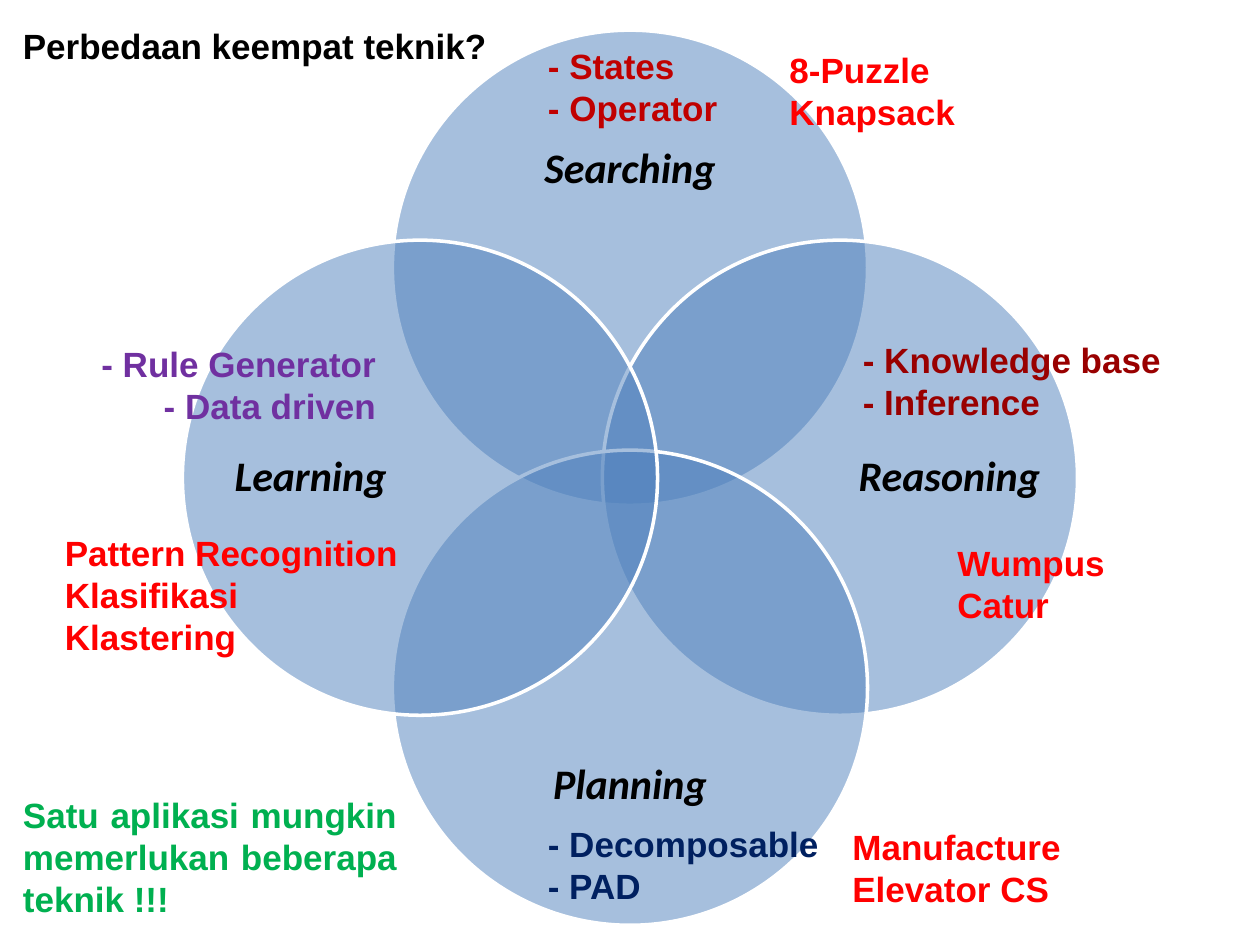
from dataclasses import dataclass

import lxml.etree
import pptx
import pptx.dml.color
import pptx.enum.shapes
import pptx.enum.text
import pptx.oxml.ns
import pptx.util

Pt = pptx.util.Pt
ALIGN = pptx.enum.text.PP_ALIGN


@dataclass(frozen=True)
class Theme:
    circle: str = "4F81BD"
    outline: str = "FFFFFF"
    text: str = "000000"
    example: str = "FF0000"
    searching: str = "C00000"
    reasoning: str = "990000"
    planning: str = "002060"
    learning: str = "7030A0"
    remark: str = "00B050"
    label_font: str = "Calibri"
    note_font: str = "Arial"
    label_size: int = 24
    note_size: int = 20


THEME = Theme()
CENTRE_X, CENTRE_Y = 360, 273
DIAMETER = 271.5
CIRCLE_OFFSET = 120

# name, horizontal and vertical direction, label distance, label width and height
TECHNIQUES = [
    ("Searching", 0, -1, 176, 208.8, 86.4),
    ("Reasoning", 1, 0, 182.5, 104.4, 208.8),
    ("Planning", 0, 1, 176, 208.8, 86.4),
    ("Learning", -1, 0, 182.5, 104.4, 208.8),
]

# left, top, width, height, colour, alignment, paragraphs
NOTES = [
    (306, 22, 120, 55.7, THEME.searching, ALIGN.LEFT, ["- States", "- Operator"]),
    (486, 190, 186, 55.7, THEME.reasoning, ALIGN.LEFT, ["- Knowledge base", "- Inference"]),
    (306, 466.5, 186, 55.7, THEME.planning, ALIGN.LEFT, ["- Decomposable", "- PAD"]),
    (36, 192, 186, 55.7, THEME.learning, ALIGN.RIGHT, ["- Rule Generator", "- Data driven"]),
    (6, 450, 228, 80, THEME.remark, ALIGN.JUSTIFY,
     ["Satu aplikasi mungkin memerlukan beberapa teknik !!!"]),
    (6, 10.5, 282, 31.5, THEME.text, ALIGN.JUSTIFY, ["Perbedaan keempat teknik?"]),
    (444, 24, 120, 55.7, THEME.example, ALIGN.LEFT, ["8-Puzzle", "Knapsack"]),
    (540, 306, 120, 55.7, THEME.example, ALIGN.LEFT, ["Wumpus Catur"]),
    (480, 468, 138, 55.7, THEME.example, ALIGN.LEFT, ["Manufacture Elevator CS"]),
    (30, 300, 210, 80, THEME.example, ALIGN.LEFT,
     ["Pattern Recognition Klasifikasi Klastering"]),
]


def rgb(colour):
    return pptx.dml.color.RGBColor.from_string(colour)


def centred(x, y, width, height):
    """Left, top, width and height of a frame around a centre point."""
    return [Pt(v) for v in (x - width / 2, y - height / 2, width, height)]


def add_circle(page, x, y):
    circle = page.shapes.add_shape(
        pptx.enum.shapes.MSO_SHAPE.OVAL, *centred(x, y, DIAMETER, DIAMETER))
    circle.shadow.inherit = False
    circle.fill.solid()
    circle.fill.fore_color.rgb = rgb(THEME.circle)
    colour = circle.fill._xPr.find(".//" + pptx.oxml.ns.qn("a:srgbClr"))
    lxml.etree.SubElement(colour, pptx.oxml.ns.qn("a:alpha"), val="50000")
    circle.line.color.rgb = rgb(THEME.outline)
    circle.line.width = Pt(2)


def add_span(para, text, font, size, colour, italic=False):
    span = para.add_run()
    span.text = text
    span.font.name = font
    span.font.size = Pt(size)
    span.font.bold = True
    span.font.italic = italic
    span.font.color.rgb = rgb(colour)


def add_label(page, name, x, y, width, height):
    frame = page.shapes.add_textbox(*centred(x, y, width, height)).text_frame
    frame.word_wrap = True
    frame.vertical_anchor = pptx.enum.text.MSO_ANCHOR.MIDDLE
    frame.margin_left = frame.margin_right = 0
    frame.margin_top = frame.margin_bottom = 0
    para = frame.paragraphs[0]
    para.alignment = ALIGN.CENTER
    para.line_spacing = 0.9
    add_span(para, name, THEME.label_font, THEME.label_size, THEME.text, italic=True)


def add_note(page, left, top, width, height, colour, alignment, lines):
    box = page.shapes.add_textbox(Pt(left), Pt(top), Pt(width), Pt(height))
    frame = box.text_frame
    frame.word_wrap = True
    frame.auto_size = pptx.enum.text.MSO_AUTO_SIZE.SHAPE_TO_FIT_TEXT
    for index, line in enumerate(lines):
        para = frame.add_paragraph() if index else frame.paragraphs[0]
        para.alignment = alignment
        add_span(para, line, THEME.note_font, THEME.note_size, colour)


def main():
    deck = pptx.Presentation()
    deck.slide_width, deck.slide_height = Pt(720), Pt(540)
    page = deck.slides.add_slide(deck.slide_layouts[6])
    for name, dx, dy, distance, width, height in TECHNIQUES:
        add_circle(page, CENTRE_X + dx * CIRCLE_OFFSET, CENTRE_Y + dy * CIRCLE_OFFSET)
        add_label(page, name, CENTRE_X + dx * distance, CENTRE_Y + dy * distance,
                  width, height)
    for note in NOTES:
        add_note(page, *note)
    deck.save("out.pptx")


if __name__ == "__main__":
    main()
